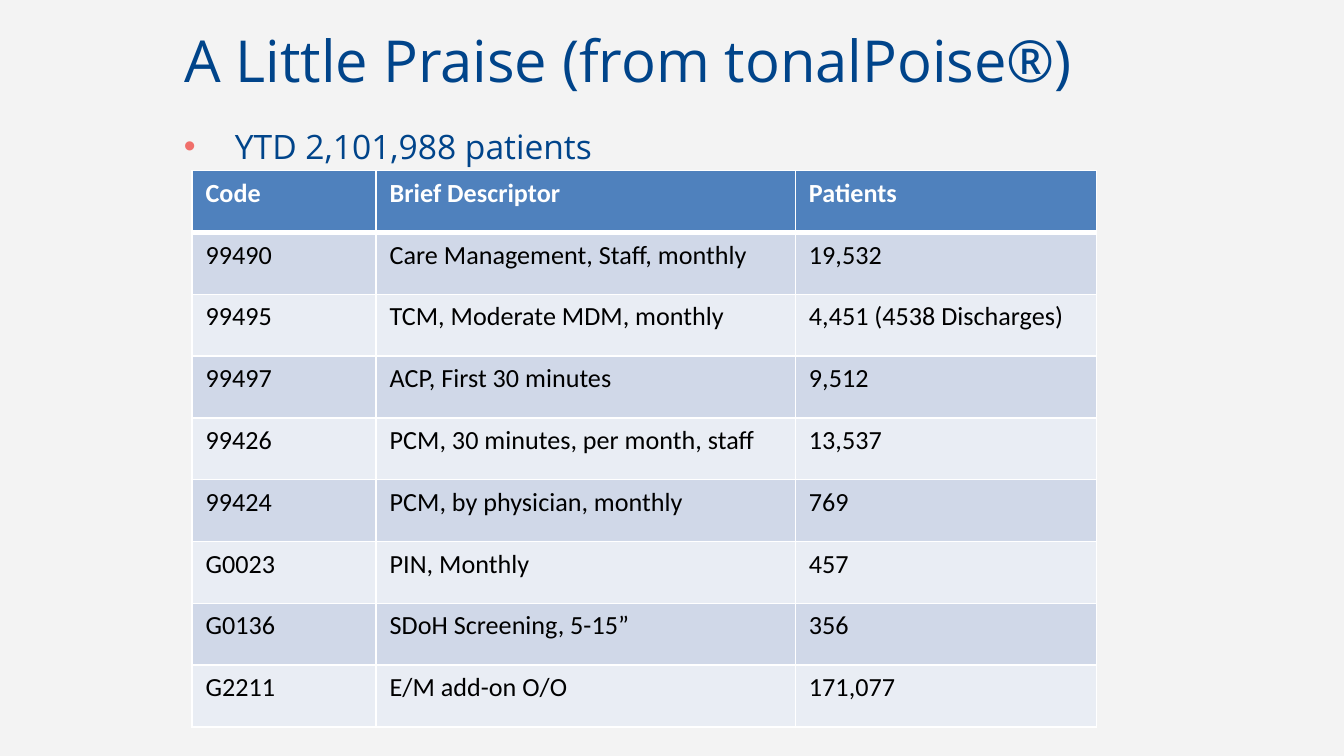
from dataclasses import dataclass

from lxml.etree import SubElement
from pptx import Presentation
from pptx.dml.color import RGBColor
from pptx.enum.text import MSO_ANCHOR, MSO_AUTO_SIZE, PP_ALIGN
from pptx.oxml.ns import qn
from pptx.util import Inches, Pt


@dataclass(frozen=True)
class Theme:
    back: str = "F3F3F3"
    navy: str = "00448A"
    coral: str = "F06F6A"
    head: str = "4F81BD"
    bands: tuple = ("D0D8E8", "E9EDF4")
    white: str = "FFFFFF"
    black: str = "000000"
    sans: str = "Open Sans"
    grid: str = "Calibri"
    title: int = 31
    lead: int = 18
    cell: int = 14


THEME = Theme()
WIDTHS = (1.37, 3.12, 2.24)
ROWS = (
    ("Code", "Brief Descriptor", "Patients"),
    ("99490", "Care Management, Staff, monthly", "19,532"),
    ("99495", "TCM, Moderate MDM, monthly", "4,451 (4538 Discharges)"),
    ("99497", "ACP, First 30 minutes", "9,512"),
    ("99426", "PCM, 30 minutes, per month, staff", "13,537"),
    ("99424", "PCM, by physician, monthly", "769"),
    ("G0023", "PIN, Monthly", "457"),
    ("G0136", "SDoH Screening, 5-15”", "356"),
    ("G2211", "E/M add-on O/O", "171,077"),
)


def style(para, face, size, color, bold=False):
    for run in para.runs:
        font = run.font
        font.name, font.size, font.bold = face, Pt(size), bold
        font.color.rgb = RGBColor.from_string(color)


def place(shape, box):
    shape.left, shape.top, shape.width, shape.height = map(Inches, box)


def add_title(slide, box, text):
    title = slide.shapes.title
    place(title, box)
    frame = title.text_frame
    frame.text = text
    frame.word_wrap = True
    frame.auto_size = MSO_AUTO_SIZE.NONE
    frame.vertical_anchor = MSO_ANCHOR.MIDDLE
    para = frame.paragraphs[0]
    para.alignment = PP_ALIGN.LEFT
    style(para, THEME.sans, THEME.title, THEME.navy)


def add_lead(slide, box, text):
    frame = slide.shapes.add_textbox(*map(Inches, box)).text_frame
    frame.word_wrap = True
    frame.text = text
    para = frame.paragraphs[0]
    props = para._p.get_or_add_pPr()
    props.set("marL", str(Inches(0.38)))
    props.set("indent", str(-Inches(0.38)))
    tint = SubElement(props, qn("a:buClr"))
    SubElement(tint, qn("a:srgbClr"), val=THEME.coral)
    SubElement(props, qn("a:buFont"), typeface="Arial")
    SubElement(props, qn("a:buChar"), char="•")
    style(para, THEME.sans, THEME.lead, THEME.navy)


def add_edges(cell, top, bottom):
    props = cell._tc.get_or_add_tcPr()
    for side, width in (("L", 1), ("R", 1), ("T", top), ("B", bottom)):
        line = SubElement(props, qn(f"a:ln{side}"), w=str(Pt(width)))
        fill = SubElement(line, qn("a:solidFill"))
        SubElement(fill, qn("a:srgbClr"), val=THEME.white)


def add_codes(slide, box, rows):
    frame = slide.shapes.add_table(len(rows), len(WIDTHS), *map(Inches, box))
    table = frame.table
    for column, width in zip(table.columns, WIDTHS):
        column.width = Inches(width)
    for r, row in enumerate(rows):
        table.rows[r].height = Inches(box[3] / len(rows))
        head = r == 0
        fill = THEME.head if head else THEME.bands[(r - 1) % 2]
        ink = THEME.white if head else THEME.black
        for c, text in enumerate(row):
            cell = table.cell(r, c)
            cell.text = text
            add_edges(cell, 3 if r == 1 else 1, 3 if head else 1)
            cell.fill.solid()
            cell.fill.fore_color.rgb = RGBColor.from_string(fill)
            style(cell.text_frame.paragraphs[0], THEME.grid, THEME.cell, ink, head)


def main():
    deck = Presentation()
    deck.slide_width = Inches(10)
    deck.slide_height = deck.slide_width * 9 // 16
    slide = deck.slides.add_slide(deck.slide_layouts[5])
    fill = slide.background.fill
    fill.solid()
    fill.fore_color.rgb = RGBColor.from_string(THEME.back)
    add_title(slide, (1.27, 0.06, 8.23, 0.76), "A Little Praise (from tonalPoise®)")
    add_lead(slide, (1.27, 0.89, 8.23, 4.14), "YTD 2,101,988 patients")
    add_codes(slide, (1.43, 1.27, sum(WIDTHS), 4.14), ROWS)
    deck.save("out.pptx")


if __name__ == "__main__":
    main()
